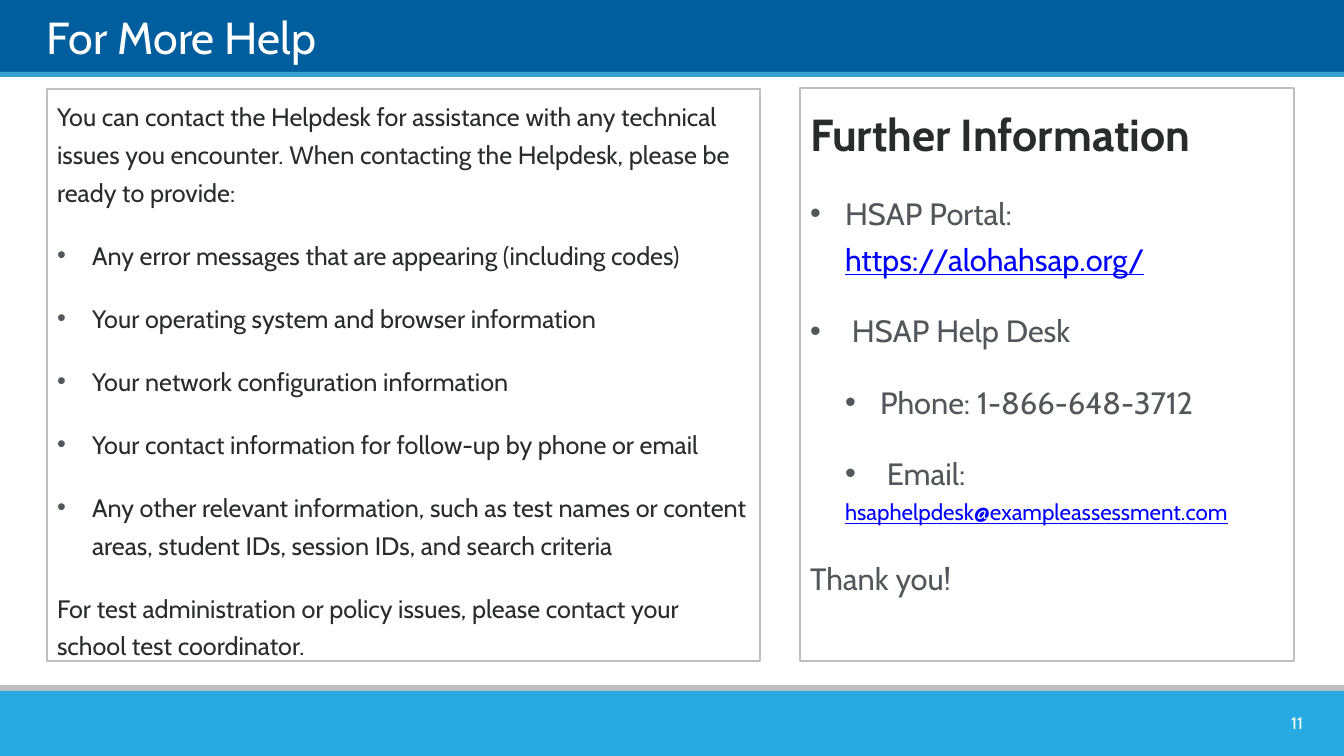
from dataclasses import dataclass

from lxml.etree import SubElement
from pptx import Presentation
from pptx.dml.color import RGBColor
from pptx.enum.shapes import MSO_SHAPE
from pptx.enum.text import MSO_ANCHOR, MSO_AUTO_SIZE, PP_ALIGN
from pptx.oxml.ns import qn
from pptx.util import Pt

EMU_PER_PX = 12192000 / 1344
INDENT = 35


@dataclass(frozen=True)
class Theme:
    font: str = "Cabin"
    navy: str = "005E9E"
    sky: str = "35A0CE"
    cyan: str = "27AAE1"
    silver: str = "BFBFBF"
    white: str = "FFFFFF"
    ink: str = "2A2B2D"
    slate: str = "53565A"
    link: str = "0000FF"
    heading: int = 32
    contact: int = 22
    body: int = 18
    email: int = 16
    number: int = 12
    spacing: float = 1.25
    gap: int = 18


def px(n):
    return round(n * EMU_PER_PX)


def add_run(p, text, *, font, size, color, bold=False, underline=False):
    r = p.add_run()
    r.text = text
    f = r.font
    f.name, f.size, f.bold, f.underline = font, Pt(size), bold, underline
    f.color.rgb = RGBColor.from_string(color)


def set_indent(p, left, bullet_color=None):
    """Set the left indent, with a hanging bullet if a bullet colour is given."""
    pPr = p._p.get_or_add_pPr()
    pPr.set("marL", str(px(left)))
    pPr.set("indent", str(px(-INDENT) if bullet_color else 0))
    if bullet_color:
        color = SubElement(pPr, qn("a:buClr"))
        SubElement(color, qn("a:srgbClr"), val=bullet_color)
        SubElement(pPr, qn("a:buFont"), typeface="Arial")
        SubElement(pPr, qn("a:buChar"), char="•")
    else:
        SubElement(pPr, qn("a:buNone"))


class SlideBuilder:
    def __init__(self, s, theme):
        self.s, self.theme = s, theme

    def place(self, sp, x, y, w, h):
        sp.left, sp.top, sp.width, sp.height = px(x), px(y), px(w), px(h)

    def bar(self, order, y, h, color):
        """Draw a full-width bar behind the placeholders."""
        sp = self.s.shapes.add_shape(MSO_SHAPE.RECTANGLE, 0, px(y), px(1344), px(h))
        sp.shadow.inherit = False
        sp.fill.solid()
        sp.fill.fore_color.rgb = RGBColor.from_string(color)
        sp.line.fill.background()
        self.s.shapes._spTree.insert(2 + order, sp._element)

    def title(self, text, x, y, w, h):
        t = self.theme
        sp = self.s.shapes.title
        self.place(sp, x, y, w, h)
        tf = sp.text_frame
        tf.auto_size = MSO_AUTO_SIZE.NONE
        tf.vertical_anchor = MSO_ANCHOR.BOTTOM
        tf.margin_left = tf.margin_right = tf.margin_top = tf.margin_bottom = 0
        p = tf.paragraphs[0]
        p.alignment = PP_ALIGN.LEFT
        add_run(p, text, font=t.font, size=t.heading, color=t.white)

    def panel(self, idx, x, y, w, h, paragraphs):
        """Fill an outlined body; a paragraph is (level, bulleted, gap, runs)."""
        t = self.theme
        sp = self.s.placeholders[idx]
        self.place(sp, x, y, w, h)
        sp.fill.background()
        sp.line.color.rgb = RGBColor.from_string(t.silver)
        sp.line.width = Pt(1)
        tf = sp.text_frame
        tf.word_wrap = True
        tf.auto_size = MSO_AUTO_SIZE.NONE
        tf.vertical_anchor = MSO_ANCHOR.TOP
        for i, (level, bulleted, gap, runs) in enumerate(paragraphs):
            p = tf.paragraphs[0] if i == 0 else tf.add_paragraph()
            p.level = level
            left = INDENT * (level + bulleted)
            set_indent(p, left, t.slate if bulleted else None)
            p.line_spacing = t.spacing
            p.space_before = Pt(gap if i else 0)
            p.space_after = Pt(0)
            for text, style in runs:
                add_run(p, text, font=t.font, **style)

    def page_number(self, text, x, y, w, h):
        t = self.theme
        sp = self.s.shapes.add_textbox(px(x), px(y), px(w), px(h))
        tf = sp.text_frame
        tf.word_wrap = True
        tf.vertical_anchor = MSO_ANCHOR.MIDDLE
        p = tf.paragraphs[0]
        p.alignment = PP_ALIGN.RIGHT
        add_run(p, text, font=t.font, size=t.number, color=t.white)


def main():
    theme = Theme()
    prs = Presentation()
    prs.slide_width, prs.slide_height = px(1344), px(756)
    s = prs.slides.add_slide(prs.slide_layouts.get_by_name("Two Content"))
    slide = SlideBuilder(s, theme)

    bars = [(0, 74, theme.navy), (72, 5, theme.sky),
            (685, 14, theme.silver), (691, 65, theme.cyan)]
    for order, (y, h, color) in enumerate(bars):
        slide.bar(order, y, h, color)
    slide.title("For More Help", 47, 7, 1253, 57)

    body = dict(size=theme.body, color=theme.ink)
    heading = dict(size=theme.heading, color=theme.ink, bold=True)
    contact = dict(size=theme.contact, color=theme.slate)
    link = dict(size=theme.contact, color=theme.link, underline=True)
    email = dict(link, size=theme.email)

    details = [
        "Any error messages that are appearing (including codes)",
        "Your operating system and browser information",
        "Your network configuration information",
        "Your contact information for follow-up by phone or email",
        "Any other relevant information, such as test names or content areas, "
        "student IDs, session IDs, and search criteria",
    ]
    intro = ("You can contact the Helpdesk for assistance with any technical issues "
             "you encounter. When contacting the Helpdesk, please be ready to provide:")
    policy = ("For test administration or policy issues, please contact your "
              "school test coordinator.")
    gap = theme.gap
    slide.panel(1, 47, 89, 713, 572, [
        (0, False, gap, [(intro, body)]),
        *[(0, True, gap, [(detail, body)]) for detail in details],
        (0, False, gap, [(policy, body)]),
    ])
    slide.panel(2, 800, 88, 494, 573, [
        (0, False, gap, [("Further Information", heading)]),
        (0, True, gap, [("HSAP Portal: ", contact), ("https://alohahsap.org/", link)]),
        (0, True, gap, [(" HSAP Help Desk", contact)]),
        (1, True, gap, [("Phone: 1-866-648-3712", contact)]),
        (1, True, gap, [(" Email:", contact)]),
        (1, False, 0, [("hsaphelpdesk@exampleassessment.com", email)]),
        (0, False, gap, [("Thank you!", contact)]),
    ])
    slide.page_number("11", 1244, 708, 69, 30)
    prs.save("out.pptx")


if __name__ == "__main__":
    main()
